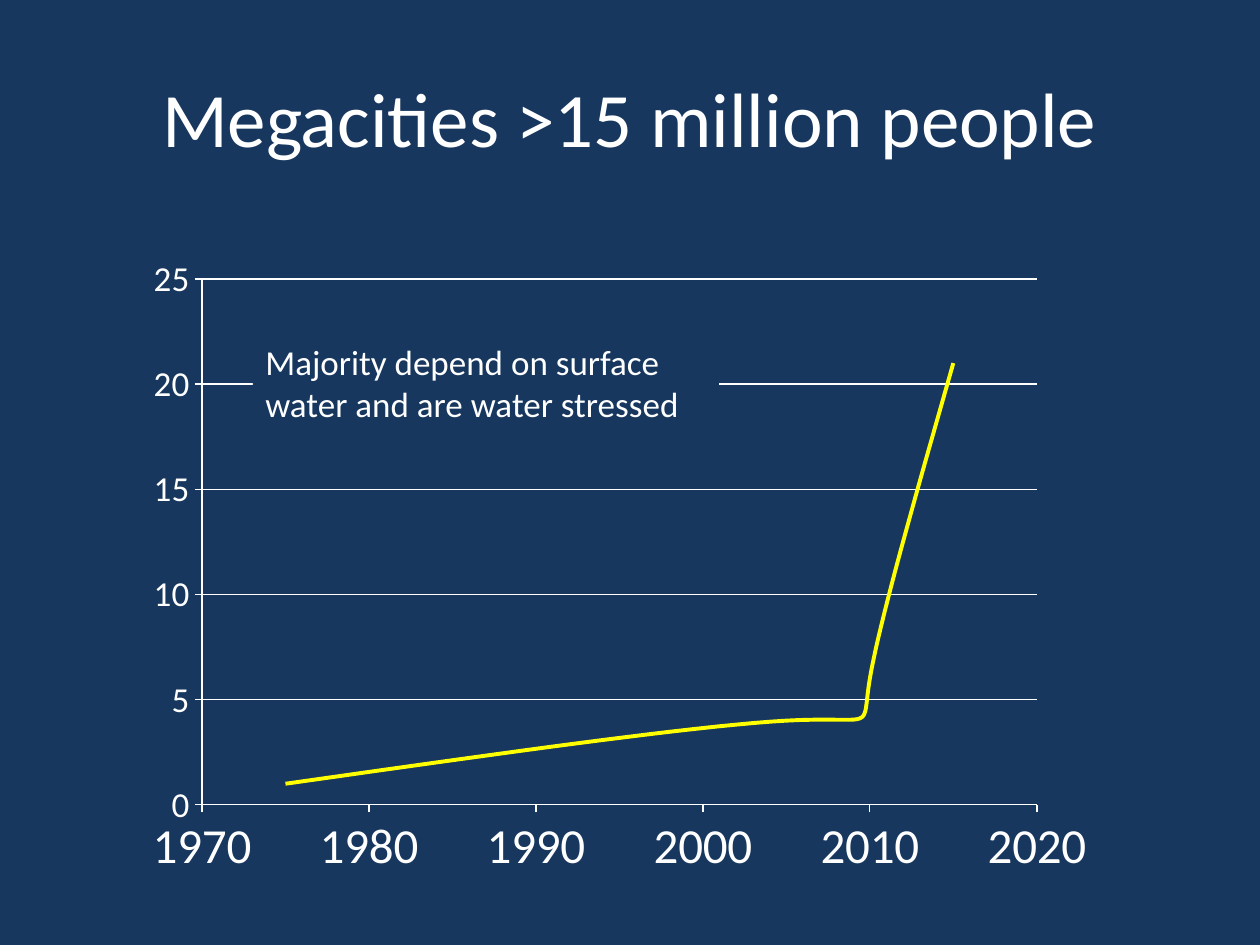
from lxml.etree import SubElement
from pptx import Presentation
from pptx.chart.data import XyChartData
from pptx.dml.color import RGBColor
from pptx.enum.chart import XL_CHART_TYPE, XL_MARKER_STYLE, XL_TICK_MARK
from pptx.enum.shapes import MSO_SHAPE
from pptx.enum.text import MSO_ANCHOR, PP_ALIGN
from pptx.oxml.ns import qn
from pptx.util import Emu, Pt

PX = 914400 // 126
FONT = "Calibri"
NAVY = RGBColor(0x17, 0x37, 0x5E)
WHITE = RGBColor(0xFF, 0xFF, 0xFF)
YELLOW = RGBColor(0xFF, 0xFF, 0x00)
CHART_BOX = (134, 244, 973, 645)
PLOT_BOX = (202, 279, 835, 526)
MEGACITIES = ((1975, 1), (2005, 4), (2010, 6), (2015, 21))


def px(*lengths):
    return [Emu(length * PX) for length in lengths]


def style_font(font, size):
    font.name = FONT
    font.size = Pt(size)
    font.color.rgb = WHITE


def write_text(shape, text, size, alignment, anchor):
    frame = shape.text_frame
    frame.word_wrap = True
    frame.vertical_anchor = anchor
    paragraph = frame.paragraphs[0]
    paragraph.alignment = alignment
    run = paragraph.add_run()
    run.text = text
    style_font(run.font, size)


def add_title(slide, box, text):
    shape = slide.shapes.add_textbox(*px(*box))
    write_text(shape, text, 44, PP_ALIGN.CENTER, MSO_ANCHOR.MIDDLE)


def add_note(slide, box, text):
    shape = slide.shapes.add_shape(MSO_SHAPE.RECTANGLE, *px(*box))
    shape.shadow.inherit = False
    shape.fill.solid()
    shape.fill.fore_color.rgb = NAVY
    shape.line.fill.background()
    write_text(shape, text, 20, PP_ALIGN.LEFT, MSO_ANCHOR.TOP)


def style_line(line, color, width):
    line.color.rgb = color
    line.width = Pt(width)


def style_axis(axis, maximum, minimum, step, size, gridlines):
    axis.minimum_scale = minimum
    axis.maximum_scale = maximum
    axis.major_unit = step
    axis.has_major_gridlines = gridlines
    axis.major_tick_mark = XL_TICK_MARK.OUTSIDE
    axis.minor_tick_mark = XL_TICK_MARK.NONE
    axis.tick_labels.number_format = "General"
    axis.tick_labels.number_format_is_linked = False
    style_font(axis.tick_labels.font, size)
    style_line(axis.format.line, WHITE, 0.75)
    if gridlines:
        style_line(axis.major_gridlines.format.line, WHITE, 0.75)


def place_plot(chart):
    left, top, width, height = CHART_BOX
    plot_left, plot_top, plot_width, plot_height = PLOT_BOX
    plot_area = chart.element.find(".//" + qn("c:plotArea"))
    layout = plot_area.find(qn("c:layout"))
    if layout is None:
        layout = plot_area.makeelement(qn("c:layout"))
        plot_area.insert(0, layout)
    manual = SubElement(layout, qn("c:manualLayout"))
    for tag, value in (
        ("layoutTarget", "inner"),
        ("xMode", "edge"),
        ("yMode", "edge"),
        ("x", (plot_left - left) / width),
        ("y", (plot_top - top) / height),
        ("w", plot_width / width),
        ("h", plot_height / height),
    ):
        SubElement(manual, qn("c:" + tag)).set("val", str(value))


def add_scatter_chart(slide):
    data = XyChartData()
    points = data.add_series("Series 1")
    for year, count in MEGACITIES:
        points.add_data_point(year, count)
    chart = slide.shapes.add_chart(
        XL_CHART_TYPE.XY_SCATTER_SMOOTH_NO_MARKERS, *px(*CHART_BOX), data
    ).chart
    chart.has_legend = False
    chart.has_title = False
    style_font(chart.font, 10)
    plot = chart.plots[0]
    plot.vary_by_categories = False
    series = plot.series[0]
    series.marker.style = XL_MARKER_STYLE.NONE
    style_line(series.format.line, YELLOW, 2.25)
    smooth = series._element.find(qn("c:smooth"))
    if smooth is None:
        smooth = SubElement(series._element, qn("c:smooth"))
    smooth.set("val", "1")
    style_axis(chart.category_axis, 2020, 1970, 10, 28, False)
    style_axis(chart.value_axis, 25, 0, 5, 20, True)
    place_plot(chart)


def main():
    presentation = Presentation()
    presentation.slide_width, presentation.slide_height = px(1260, 945)
    slide = presentation.slides.add_slide(presentation.slide_layouts[6])
    slide.background.fill.solid()
    slide.background.fill.fore_color.rgb = NAVY
    add_title(slide, (63, 38, 1134, 158), "Megacities >15 million people")
    add_scatter_chart(slide)
    add_note(
        slide,
        (253, 334, 466, 97),
        "Majority depend on surface water and are water stressed",
    )
    presentation.save("out.pptx")


if __name__ == "__main__":
    main()
